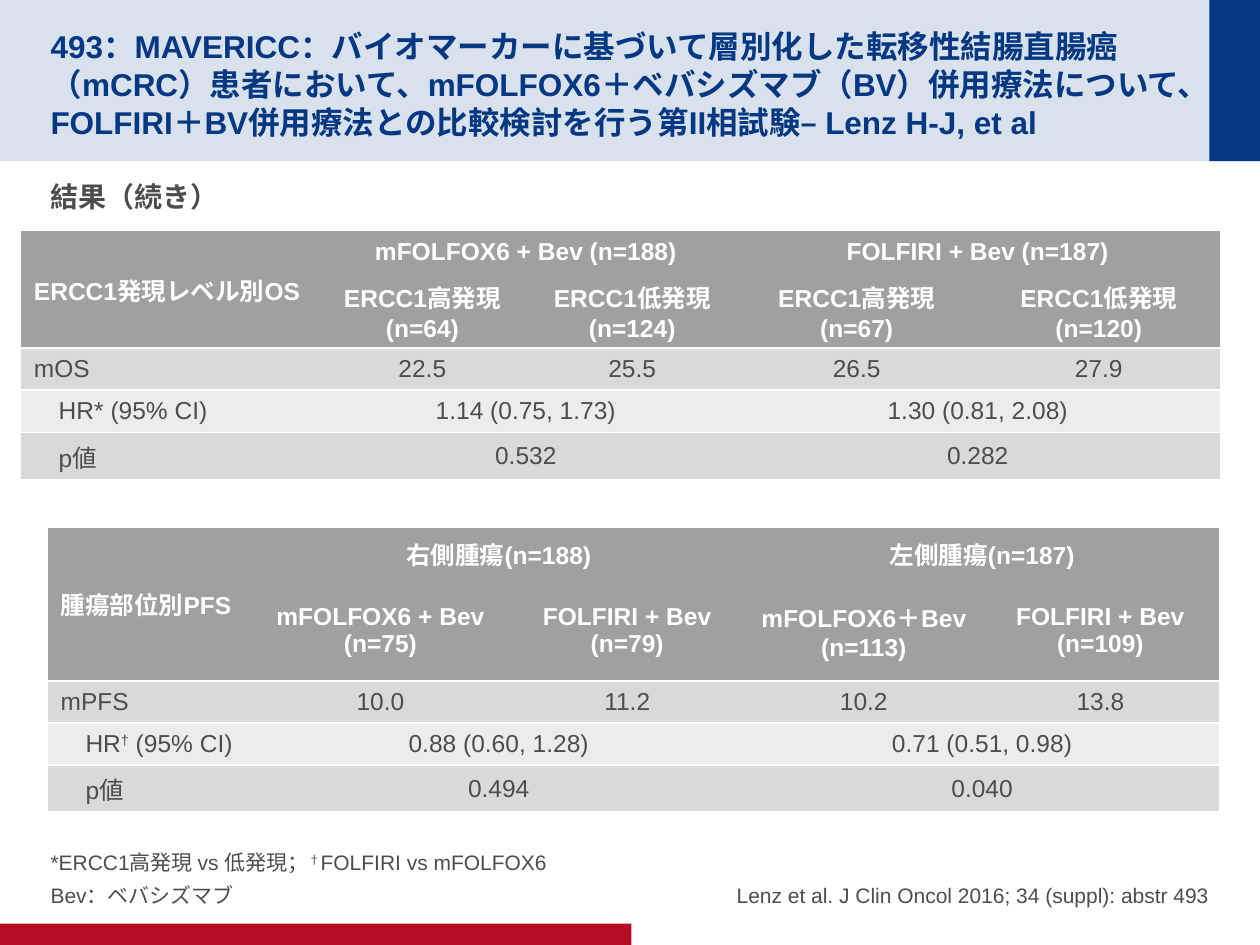
from lxml import etree
from pptx import Presentation
from pptx.dml.color import RGBColor
from pptx.enum.shapes import MSO_SHAPE
from pptx.enum.text import MSO_ANCHOR, PP_ALIGN
from pptx.oxml.ns import qn
from pptx.util import Cm, Pt

RECTANGLE = MSO_SHAPE.RECTANGLE
TOP, MIDDLE, BOTTOM = MSO_ANCHOR.TOP, MSO_ANCHOR.MIDDLE, MSO_ANCHOR.BOTTOM
LEFT, CENTER, RIGHT = PP_ALIGN.LEFT, PP_ALIGN.CENTER, PP_ALIGN.RIGHT

NAVY = RGBColor(0x04, 0x38, 0x82)
RED = RGBColor(0xB6, 0x0D, 0x27)
GRAY_TEXT = RGBColor(0x4D, 0x4D, 0x4D)
HEADER_GRAY = RGBColor(0xA0, 0xA0, 0xA0)
BANDS = (RGBColor(0xD9, 0xD9, 0xD9), RGBColor(0xEC, 0xEC, 0xEC))
WHITE = RGBColor(0xFF, 0xFF, 0xFF)

FONT = "Arial"
DAGGER = "†"
PLAIN_TABLE_STYLE = "{2D5ABB26-0587-4C30-8999-92F81FD0307C}"

# Content: left, top, width, height in cm
BARS = [
    ((0, 0, 25.4, 3.25), NAVY, 15),
    ((24.38, 0, 1.02, 3.25), NAVY, 100),
    ((0, 18.62, 12.73, 0.43), RED, 100),
]

TITLE = ("493：MAVERICC：バイオマーカーに基づいて層別化した転移性結腸直腸癌"
         "（mCRC）患者において、mFOLFOX6＋ベバシズマブ（BV）併用療法について、"
         "FOLFIRI＋BV併用療法との比較検討を行う第II相試験– Lenz H-J, et al")

# Box, lines, size, colour, bold, alignment, anchor, top inset, space after
TEXTS = [
    ((1.02, 0.51, 22.89, 2.24), [TITLE], 18, NAVY, True, LEFT, MIDDLE, 0.13, 0),
    ((1.02, 3.48, 23.37, 1), ["結果（続き）"], 16, GRAY_TEXT, True, LEFT, TOP, 0.13, 4),
    ((1.02, 16.94, 11.48, 1.35),
     ["*ERCC1高発現 vs 低発現；†FOLFIRI vs mFOLFOX6", "Bev：ベバシズマブ"],
     12, GRAY_TEXT, False, LEFT, BOTTOM, 0, 4),
    ((12.9, 16.94, 11.48, 1.35),
     ["Lenz et al. J Clin Oncol 2016; 34 (suppl): abstr 493"],
     12, GRAY_TEXT, False, RIGHT, BOTTOM, 0, 4),
]

# None marks a cell covered by its left or upper neighbour
TABLES = [
    {
        "position": (0.43, 4.65),
        "columns": (5.94, 4.29, 4.17, 4.88, 4.88),
        "rows": (0.81, 1.52, 0.81, 0.81, 0.95),
        "cells": [
            ["ERCC1発現レベル別OS", "mFOLFOX6 + Bev (n=188)", None, "FOLFIRI + Bev (n=187)", None],
            [None, "ERCC1高発現(n=64)", "ERCC1低発現\v(n=124)",
             "ERCC1高発現\v(n=67)", "ERCC1低発現\v(n=120)"],
            ["mOS", "22.5", "25.5", "26.5", "27.9"],
            ["HR* (95% CI)", "1.14 (0.75, 1.73)", None, "1.30 (0.81, 2.08)", None],
            ["p値", "0.532", None, "0.282", None],
        ],
    },
    {
        "position": (0.97, 10.62),
        "columns": (4.11, 5.18, 4.77, 4.77, 4.77),
        "rows": (1.07, 2, 0.81, 0.81, 0.95),
        "cells": [
            ["腫瘍部位別PFS", "右側腫瘍(n=188)", None, "左側腫瘍(n=187)", None],
            [None, "mFOLFOX6 + Bev (n=75)", "FOLFIRI + Bev\v(n=79)",
             "mFOLFOX6＋Bev\v(n=113)", "FOLFIRI + Bev\v(n=109)"],
            ["mPFS", "10.0", "11.2", "10.2", "13.8"],
            ["HR† (95% CI)", "0.88 (0.60, 1.28)", None, "0.71 (0.51, 0.98)", None],
            ["p値", "0.494", None, "0.040", None],
        ],
    },
]


def write(paragraph, text, size, color, bold, alignment):
    """Fill a paragraph, raising any dagger to a superscript."""
    before, dagger, after = text.partition(DAGGER)
    paragraph.text = before
    for piece in filter(None, (dagger, after)):
        paragraph.add_run().text = piece
    paragraph.alignment = alignment
    for run in paragraph.runs:
        run.font.name = FONT
        run.font.size = Pt(size)
        run.font.bold = bold
        run.font.color.rgb = color
        if run.text == DAGGER:
            run.font._element.set("baseline", "30000")


def add_bar(slide, box, color, opacity):
    bar = slide.shapes.add_shape(RECTANGLE, *map(Cm, box))
    bar.shadow.inherit = False
    bar.fill.solid()
    bar.fill.fore_color.rgb = color
    bar.line.fill.background()
    if opacity < 100:
        color_element = bar._element.spPr.find(qn("a:solidFill"))[0]
        etree.SubElement(color_element, qn("a:alpha"), val=str(opacity * 1000))


def add_text(slide, box, lines, size, color, bold, alignment, anchor, inset, space_after):
    frame = slide.shapes.add_textbox(*map(Cm, box)).text_frame
    frame.word_wrap = True
    frame.vertical_anchor = anchor
    frame.margin_left = frame.margin_right = frame.margin_bottom = 0
    frame.margin_top = Cm(inset)
    for index, line in enumerate(lines):
        paragraph = frame.add_paragraph() if index else frame.paragraphs[0]
        write(paragraph, line, size, color, bold, alignment)
        paragraph.space_after = Pt(space_after)


def set_border(cell, side):
    line = etree.Element(qn("a:" + side), w=str(Pt(1)))
    fill = etree.SubElement(line, qn("a:solidFill"))
    etree.SubElement(fill, qn("a:srgbClr"), val=str(WHITE))
    properties = cell._tc.get_or_add_tcPr()
    properties.insert(len(properties) - 1, line)  # borders precede the fill


def add_results_table(slide, position, columns, rows, cells):
    left, top = position
    table = slide.shapes.add_table(
        len(rows), len(columns), Cm(left), Cm(top), Cm(sum(columns)), Cm(sum(rows))).table
    table._tbl.tblPr.find(qn("a:tableStyleId")).text = PLAIN_TABLE_STYLE
    for column, width in zip(table.columns, columns):
        column.width = Cm(width)
    for row, height in zip(table.rows, rows):
        row.height = Cm(height)

    for r, texts in enumerate(cells):
        header = r < 2
        for c, text in enumerate(texts):
            cell = table.cell(r, c)
            cell.fill.solid()
            cell.fill.fore_color.rgb = HEADER_GRAY if header else BANDS[r % 2]
            if r == 0:
                set_border(cell, "lnT")
            if r > 0 or c == 0:
                set_border(cell, "lnB")
            if text is None:
                continue
            cell.vertical_anchor = MIDDLE
            paragraph = cell.text_frame.paragraphs[0]
            write(paragraph, text, 14, WHITE if header else GRAY_TEXT, header,
                  CENTER if c else LEFT)
            if c == 0 and r > 2:
                paragraph._p.get_or_add_pPr().set("marL", str(Cm(0.5)))

    # Header label spans two rows; paired results span two columns
    table.cell(0, 0).merge(table.cell(1, 0))
    for r, texts in enumerate(cells):
        for c in range(2, len(texts)):
            if texts[c] is None:
                table.cell(r, c - 1).merge(table.cell(r, c))


def main():
    presentation = Presentation()
    presentation.slide_width, presentation.slide_height = Cm(25.4), Cm(19.05)
    slide = presentation.slides.add_slide(presentation.slide_layouts[6])
    for bar in BARS:
        add_bar(slide, *bar)
    for text in TEXTS:
        add_text(slide, *text)
    for table in TABLES:
        add_results_table(slide, **table)
    presentation.save("out.pptx")


if __name__ == "__main__":
    main()
